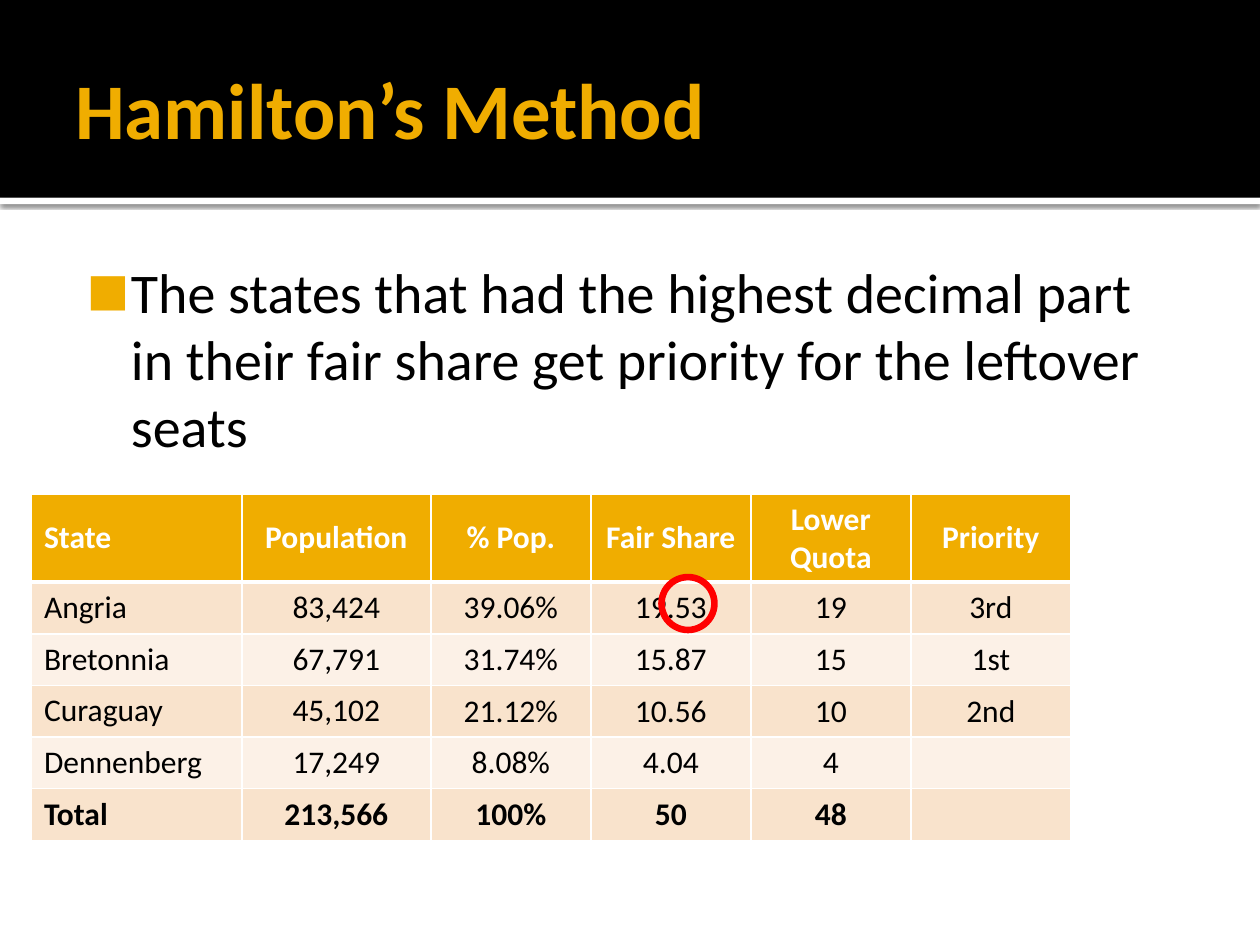
from lxml import etree
from pptx import Presentation
from pptx.dml.color import RGBColor
from pptx.enum.shapes import MSO_SHAPE
from pptx.enum.text import MSO_ANCHOR, PP_ALIGN
from pptx.oxml import parse_xml
from pptx.oxml.ns import nsdecls, qn
from pptx.util import Inches, Pt

RECTANGLE, OVAL = MSO_SHAPE.RECTANGLE, MSO_SHAPE.OVAL
MIDDLE, TOP = MSO_ANCHOR.MIDDLE, MSO_ANCHOR.TOP
LEFT, CENTER = PP_ALIGN.LEFT, PP_ALIGN.CENTER

FONT = "Calibri"
BLACK = RGBColor(0x00, 0x00, 0x00)
WHITE = RGBColor(0xFF, 0xFF, 0xFF)
GOLD = RGBColor(0xF0, 0xAD, 0x00)
DARK_BAND = RGBColor(0xF9, 0xE3, 0xCC)
LIGHT_BAND = RGBColor(0xFC, 0xF1, 0xE7)
RED = RGBColor(0xFF, 0x00, 0x00)

COLUMN_WIDTHS = [1.67, 1.5] + [1.27] * 4
HEADER_HEIGHT, ROW_HEIGHT = 0.7, 0.41
TABLE_ROWS = [
    ["State", "Population", "% Pop.", "Fair Share", "Lower Quota", "Priority"],
    ["Angria", "83,424", "39.06%", "19.53", "19", "3rd"],
    ["Bretonnia", "67,791", "31.74%", "15.87", "15", "1st"],
    ["Curaguay", "45,102", "21.12%", "10.56", "10", "2nd"],
    ["Dennenberg", "17,249", "8.08%", "4.04", "4", ""],
    ["Total", "213,566", "100%", "50", "48", ""],
]


def add_shape(slide, kind, box, fill=None, line=None, line_width=0):
    shape = slide.shapes.add_shape(kind, *map(Inches, box))
    shape.shadow.inherit = False
    if fill is None:
        shape.fill.background()
    else:
        shape.fill.solid()
        shape.fill.fore_color.rgb = fill
    if line is None:
        shape.line.fill.background()
    else:
        shape.line.color.rgb = line
        shape.line.width = Pt(line_width)
    return shape


def add_soft_shadow(shape):
    effects = shape.element.spPr.find(qn("a:effectLst"))
    effects.append(parse_xml(
        f'<a:outerShdw {nsdecls("a")} blurRad="{Pt(2.5)}" dist="{Pt(0.8)}" '
        'dir="5400000" algn="tl" rotWithShape="0"><a:srgbClr val="000000">'
        '<a:alpha val="60000"/></a:srgbClr></a:outerShdw>'))


def style_font(paragraph, size, color, bold=False):
    font = paragraph.font
    font.name, font.size, font.bold = FONT, Pt(size), bold
    font.color.rgb = color


def add_text(slide, box, text, size, color, margins, anchor=TOP, bold=False):
    frame = slide.shapes.add_textbox(*map(Inches, box)).text_frame
    frame.word_wrap = True
    frame.vertical_anchor = anchor
    (frame.margin_left, frame.margin_top,
     frame.margin_right, frame.margin_bottom) = map(Inches, margins)
    paragraph = frame.paragraphs[0]
    paragraph.text = text
    style_font(paragraph, size, color, bold)
    return paragraph


def add_square_bullet(paragraph):
    properties = paragraph._p.get_or_add_pPr()
    properties.set("marL", str(Inches(0.48)))
    properties.set("indent", str(Inches(-0.35)))
    bullet_parts = [
        f'<a:buClr {nsdecls("a")}><a:srgbClr val="{GOLD}"/></a:buClr>',
        f'<a:buSzPct {nsdecls("a")} val="80000"/>',
        f'<a:buFont {nsdecls("a")} typeface="{FONT}"/>',
        f'<a:buChar {nsdecls("a")} char="■"/>',
    ]
    for position, part in enumerate(bullet_parts):
        properties.insert(position, parse_xml(part))


def set_borders(cell, bottom_width, top_width):
    properties = cell._tc.get_or_add_tcPr()
    widths = {"lnL": 1, "lnR": 1, "lnT": top_width, "lnB": bottom_width}
    for position, (side, width) in enumerate(widths.items()):
        line = etree.Element(qn(f"a:{side}"), w=str(Pt(width)))
        fill = etree.SubElement(line, qn("a:solidFill"))
        etree.SubElement(fill, qn("a:srgbClr"), val=str(WHITE))
        properties.insert(position, line)


def fill_cell(cell, text, row, column):
    is_header = row == 0
    cell.fill.solid()
    cell.fill.fore_color.rgb = (
        GOLD if is_header else DARK_BAND if row % 2 else LIGHT_BAND)
    cell.vertical_anchor = MIDDLE if is_header or column > 1 else TOP
    paragraph = cell.text_frame.paragraphs[0]
    paragraph.text = text
    paragraph.alignment = CENTER if column else LEFT
    style_font(paragraph, 18, WHITE if is_header else BLACK,
               bold=row in (0, len(TABLE_ROWS) - 1))
    set_borders(cell, bottom_width=3 if is_header else 1,
                top_width=3 if row == 1 else 1)


def add_apportionment_table(slide, left, top):
    heights = [HEADER_HEIGHT] + [ROW_HEIGHT] * (len(TABLE_ROWS) - 1)
    table = slide.shapes.add_table(
        len(heights), len(COLUMN_WIDTHS), Inches(left), Inches(top),
        Inches(sum(COLUMN_WIDTHS)), Inches(sum(heights))).table
    for column, width in zip(table.columns, COLUMN_WIDTHS):
        column.width = Inches(width)
    for row, height in zip(table.rows, heights):
        row.height = Inches(height)
    for row, texts in enumerate(TABLE_ROWS):
        for column, text in enumerate(texts):
            fill_cell(table.cell(row, column), text, row, column)


def main():
    presentation = Presentation()
    presentation.slide_width = Inches(10)
    presentation.slide_height = Inches(7.5)
    slide = presentation.slides.add_slide(presentation.slide_layouts[6])

    # Title band with a shadowed white edge
    edge = add_shape(slide, RECTANGLE, (0, 1.57, 10, 0.05), fill=WHITE)
    add_soft_shadow(edge)
    add_shape(slide, RECTANGLE, (0, 0, 10, 1.57), fill=BLACK)
    add_text(slide, (0.5, 0.17, 9, 1.37), "Hamilton’s Method", 45, GOLD,
             (0.1, 0.05, 0.05, 0.05), anchor=MIDDLE, bold=True)

    # Explanation
    explanation = add_text(
        slide, (0.5, 1.94, 9, 5.06),
        "The states that had the highest decimal part in their fair share "
        "get priority for the leftover seats",
        32, BLACK, (0.06, 0.1, 0.1, 0.05))
    add_square_bullet(explanation)

    # Table, with a ring around the first decimal part
    add_apportionment_table(slide, 0.25, 3.92)
    add_shape(slide, OVAL, (5.25, 4.58, 0.42, 0.42), line=RED, line_width=3.78)

    presentation.save("out.pptx")


if __name__ == "__main__":
    main()
